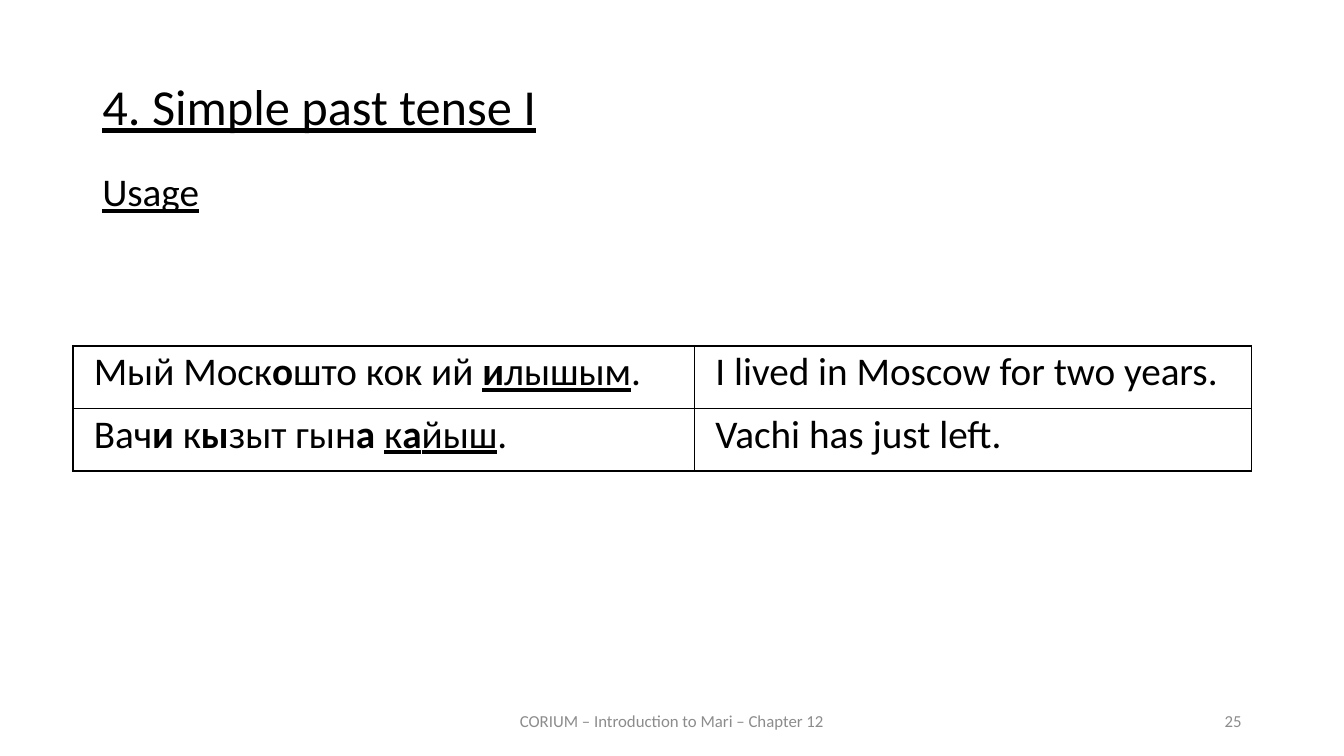
from lxml import etree
from pptx import Presentation
from pptx.dml.color import RGBColor
from pptx.enum.text import MSO_ANCHOR, MSO_AUTO_SIZE, PP_ALIGN
from pptx.oxml.ns import qn
from pptx.util import Pt

LEFT, CENTER, RIGHT, JUSTIFY = PP_ALIGN.LEFT, PP_ALIGN.CENTER, PP_ALIGN.RIGHT, PP_ALIGN.JUSTIFY
TOP, MIDDLE = MSO_ANCHOR.TOP, MSO_ANCHOR.MIDDLE
NO_AUTOFIT = MSO_AUTO_SIZE.NONE
TITLE_ONLY = 5

COLORS = {"ink": "000000", "footer": "8C8C8C"}
FONT = "Calibri"
OUTER_LINE, INNER_LINE = 1.5, 1

TITLE_FORMAT = {"alignment": JUSTIFY, "line_spacing": 0.9, "space_before": Pt(12)}
SUBTITLE_FORMAT = {"alignment": LEFT, "line_spacing": 0.9, "space_before": Pt(10)}
CELL_FORMAT = {"alignment": JUSTIFY}
CELL_MARGINS = {
    "margin_left": Pt(15), "margin_right": Pt(15),
    "margin_top": Pt(2), "margin_bottom": Pt(0),
}

# Each span is (text, marks): b for the stressed vowel, u for the verb form.
EXAMPLES = [
    (
        [("Мый Моск", ""), ("о", "b"), ("што кок ий ", ""),
         ("и", "bu"), ("лышым", "u"), (".", "")],
        [("I lived in Moscow for two years.", "")],
    ),
    (
        [("Вач", ""), ("и", "b"), (" к", ""), ("ы", "b"), ("зыт гын", ""), ("а ", "b"),
         ("к", "u"), ("а", "bu"), ("йыш", "u"), (".", "")],
        [("Vachi has just left.", "")],
    ),
]
COLUMN_WIDTHS = (444, 398)
ROW_HEIGHT = 44.7


def set_all(target, values):
    for name, value in values.items():
        setattr(target, name, value)


def write_spans(frame, spans, size, color, para_format):
    para = frame.paragraphs[0]
    set_all(para, para_format)
    for text, marks in spans:
        span = para.add_run()
        span.text = text
        set_all(span.font, {
            "name": FONT, "size": Pt(size),
            "bold": "b" in marks, "underline": "u" in marks,
        })
        span.font.color.rgb = RGBColor.from_string(COLORS[color])


def fill_box(box, place, spans, size, color, para_format, anchor=TOP):
    """Place a text box or placeholder and write its one paragraph."""
    set_all(box, dict(zip(("left", "top", "width", "height"), map(Pt, place))))
    set_all(box.text_frame, {
        "word_wrap": True, "auto_size": NO_AUTOFIT, "vertical_anchor": anchor,
    })
    write_spans(box.text_frame, spans, size, color, para_format)


def add_text(page, place, *content):
    fill_box(page.shapes.add_textbox(0, 0, 0, 0), place, *content)


def set_borders(cell, widths):
    """Draw the cell's edges; widths maps L, R, T and B to points."""
    properties = cell._tc.get_or_add_tcPr()
    for position, (side, width) in enumerate(widths.items()):
        line = etree.Element(qn(f"a:ln{side}"), w=str(Pt(width)))
        fill = etree.SubElement(line, qn("a:solidFill"))
        etree.SubElement(fill, qn("a:srgbClr"), val=COLORS["ink"])
        properties.insert(position, line)


def add_examples(page, left, top):
    last_row, last_column = len(EXAMPLES) - 1, len(COLUMN_WIDTHS) - 1
    table = page.shapes.add_table(
        len(EXAMPLES), len(COLUMN_WIDTHS), Pt(left), Pt(top),
        Pt(sum(COLUMN_WIDTHS)), Pt(ROW_HEIGHT * len(EXAMPLES)),
    ).table
    set_all(table, {"first_row": False, "horz_banding": False})
    for column, width in zip(table.columns, COLUMN_WIDTHS):
        column.width = Pt(width)
    for r, example in enumerate(EXAMPLES):
        table.rows[r].height = Pt(ROW_HEIGHT)
        for c, spans in enumerate(example):
            cell = table.cell(r, c)
            set_all(cell, CELL_MARGINS)
            cell.fill.background()
            write_spans(cell.text_frame, spans, 28, "ink", CELL_FORMAT)
            on_edge = {"L": c == 0, "R": c == last_column, "T": r == 0, "B": r == last_row}
            set_borders(cell, {
                side: OUTER_LINE if outer else INNER_LINE for side, outer in on_edge.items()
            })


def main():
    deck = Presentation()
    deck.slide_width, deck.slide_height = Pt(960), Pt(540)
    page = deck.slides.add_slide(deck.slide_layouts[TITLE_ONLY])
    fill_box(page.shapes.title, (66, 55, 828, 60),
             [("4. Simple past tense I", "u")], 36, "ink", TITLE_FORMAT)
    add_text(page, (66, 120, 828, 44), [("Usage", "u")], 28, "ink", SUBTITLE_FORMAT)
    add_examples(page, 52, 247)
    add_text(page, (318, 500.5, 324, 28.75), [("CORIUM – Introduction to Mari – Chapter 12", "")],
             12, "footer", {"alignment": CENTER}, MIDDLE)
    add_text(page, (678, 500.5, 216, 28.75), [("25", "")],
             12, "footer", {"alignment": RIGHT}, MIDDLE)
    deck.save("out.pptx")


if __name__ == "__main__":
    main()
